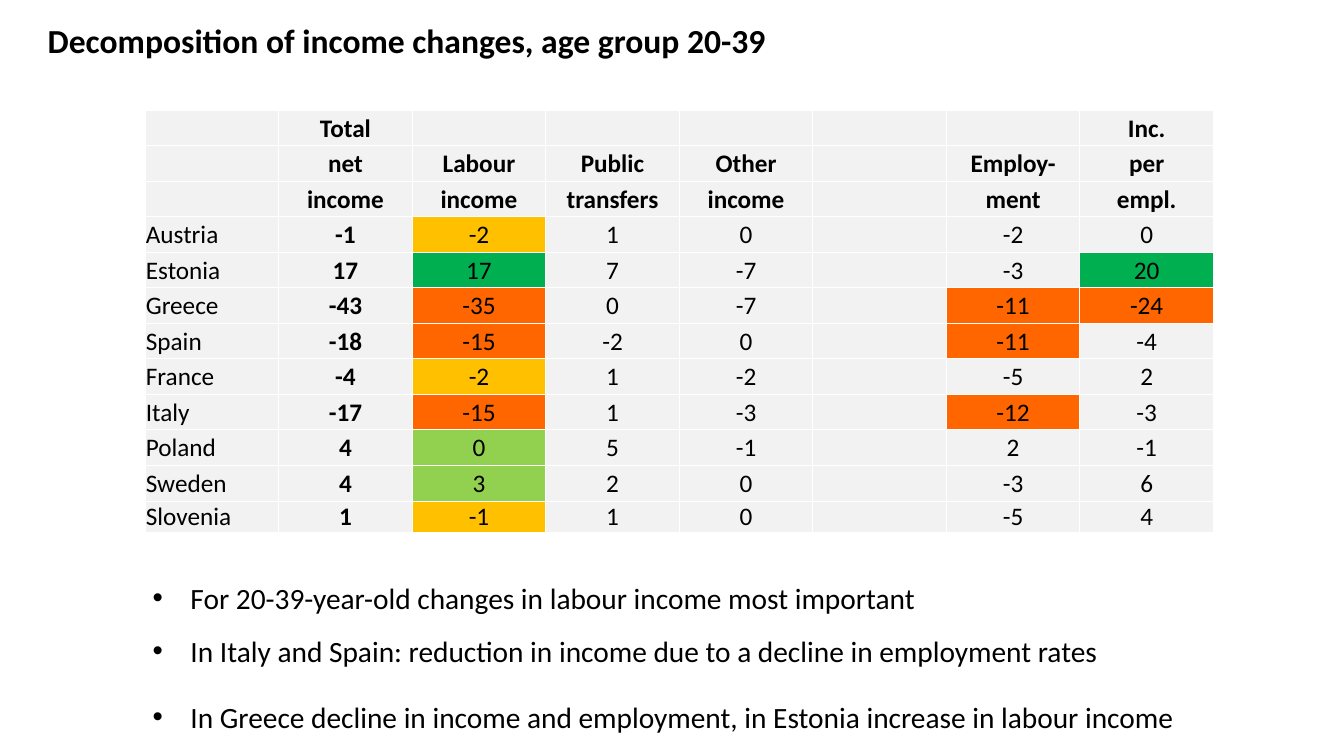
import dataclasses

import lxml.etree
import pptx
import pptx.dml.color
import pptx.enum.text
import pptx.oxml.ns
import pptx.util

Inches = pptx.util.Inches
ALIGN = pptx.enum.text.PP_ALIGN
MIDDLE = pptx.enum.text.MSO_ANCHOR.MIDDLE


@dataclasses.dataclass(frozen=True)
class Theme:
    """Colours, font and type sizes of the slide."""
    face: str = "Calibri"
    ink: str = "000000"
    line: str = "FFFFFF"
    plain: str = "F2F2F2"
    loss: str = "FF6600"
    dip: str = "FFC000"
    rise: str = "92D050"
    gain: str = "00B050"
    head: int = 32
    cell: int = 24
    list: int = 28


THEME = Theme()
WIDE, HIGH = 17.78, 10

TITLE = "Decomposition of income changes, age group 20-39"
HEADS = [
    ["", "Total", "", "", "", "", "", "Inc."],
    ["", "net", "Labour", "Public", "Other", "", "Employ-", "per"],
    ["", "income", "income", "transfers", "income", "", "ment", "empl."],
]
ROWS = [
    ["Austria", -1, -2, 1, 0, "", -2, 0],
    ["Estonia", 17, 17, 7, -7, "", -3, 20],
    ["Greece", -43, -35, 0, -7, "", -11, -24],
    ["Spain", -18, -15, -2, 0, "", -11, -4],
    ["France", -4, -2, 1, -2, "", -5, 2],
    ["Italy", -17, -15, 1, -3, "", -12, -3],
    ["Poland", 4, 0, 5, -1, "", 2, -1],
    ["Sweden", 4, 3, 2, 0, "", -3, 6],
    ["Slovenia", 1, -1, 1, 0, "", -5, 4],
]
POINTS = [
    "For 20-39-year-old changes in labour income most important",
    "In Italy and Spain: reduction in income due to a decline in employment rates",
    "In Greece decline in income and employment, in Estonia increase in labour income",
]
TOTAL, LABOUR, EMPLOY, PER = 1, 2, 6, 7


def paint(hue):
    """Turn a hex string into a colour."""
    return pptx.dml.color.RGBColor.from_string(hue)


def style(para, size, bold=False, align=ALIGN.LEFT):
    """Set the font and alignment of a paragraph."""
    para.alignment = align
    para.font.name = THEME.face
    para.font.size = pptx.util.Pt(size)
    para.font.bold = bold
    para.font.color.rgb = paint(THEME.ink)


def indent(para, left, first=0):
    """Indent a paragraph and its first line, in inches."""
    props = para._p.get_or_add_pPr()
    props.set("marL", str(Inches(left)))
    props.set("indent", str(Inches(first)))


def place(shape, box):
    """Move a shape to a box given in shares of the slide."""
    left, top, width, height = box
    shape.left, shape.width = Inches(left * WIDE), Inches(width * WIDE)
    shape.top, shape.height = Inches(top * HIGH), Inches(height * HIGH)


def edge(cell):
    """Draw a thin line on all four sides of a cell."""
    name = pptx.oxml.ns.qn
    props = cell._tc.get_or_add_tcPr()
    for spot, side in enumerate(("lnL", "lnR", "lnT", "lnB")):
        line = lxml.etree.Element(name(f"a:{side}"), w=str(pptx.util.Pt(1)))
        fill = lxml.etree.SubElement(line, name("a:solidFill"))
        lxml.etree.SubElement(fill, name("a:srgbClr"), val=THEME.line)
        props.insert(spot, line)


def shade(col, value):
    """Choose a cell's fill from its column and value."""
    if col not in (LABOUR, EMPLOY, PER) or isinstance(value, str):
        return THEME.plain
    if value <= -11:
        return THEME.loss
    if value >= 17:
        return THEME.gain
    if col == LABOUR:
        return THEME.dip if value < 0 else THEME.rise
    return THEME.plain


def add_title(slide, box):
    """Fill the title placeholder."""
    title = slide.shapes.title
    place(title, box)
    frame = title.text_frame
    frame.text = TITLE
    frame.vertical_anchor = MIDDLE
    frame.auto_size = pptx.enum.text.MSO_AUTO_SIZE.NONE
    style(frame.paragraphs[0], THEME.head, bold=True)
    indent(frame.paragraphs[0], 0.53)


def add_grid(slide, box):
    """Add the table of income changes by country."""
    data = HEADS + ROWS
    left, top, width, height = box
    shape = slide.shapes.add_table(
        len(data), len(data[0]), Inches(left * WIDE), Inches(top * HIGH),
        Inches(width * WIDE), Inches(height * HIGH))
    table = shape.table
    table.first_row = table.horz_banding = False
    for row in table.rows:
        row.height = Inches(0.47)
    table.rows[len(data) - 1].height = Inches(0.26)
    for num, row in enumerate(data):
        for col, value in enumerate(row):
            cell = table.cell(num, col)
            cell.text = str(value)
            cell.vertical_anchor = MIDDLE
            cell.margin_left = cell.margin_right = cell.margin_top = Inches(0.01)
            cell.margin_bottom = 0
            cell.fill.solid()
            cell.fill.fore_color.rgb = paint(shade(col, value))
            edge(cell)
            style(cell.text_frame.paragraphs[0], THEME.cell,
                  bold=num < len(HEADS) or col == TOTAL,
                  align=ALIGN.CENTER if col else ALIGN.LEFT)


def add_list(slide, box):
    """Fill the body placeholder with the bullet points."""
    body = slide.placeholders[1]
    place(body, box)
    frame = body.text_frame
    frame.text = "\n".join(POINTS)
    frame.auto_size = pptx.enum.text.MSO_AUTO_SIZE.NONE
    for para in frame.paragraphs:
        style(para, THEME.list)
        indent(para, 0.5, -0.5)
        para.line_spacing = 1.5
        para.space_before = pptx.util.Pt(0)
    frame.paragraphs[-1].space_before = pptx.util.Pt(12)


def main():
    """Build and save the slide."""
    deck = pptx.Presentation()
    deck.slide_width, deck.slide_height = Inches(WIDE), Inches(HIGH)
    slide = deck.slides.add_slide(deck.slide_layouts[1])
    add_title(slide, (0, 0, 1, 0.106))
    add_grid(slide, (0.108, 0.146, 0.795, 0.543))
    add_list(slide, (0.108, 0.739, 0.806, 0.231))
    deck.save("out.pptx")


if __name__ == "__main__":
    main()
